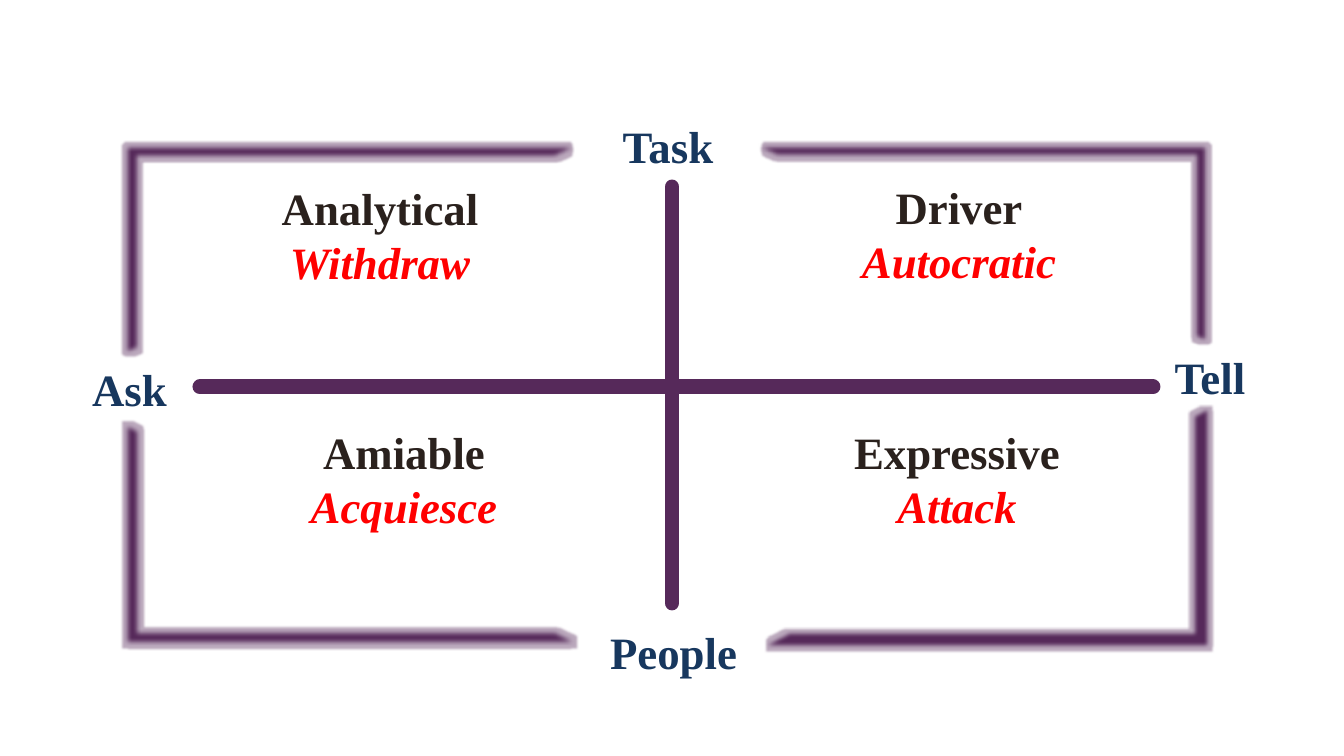
from dataclasses import dataclass

import pptx
import pptx.dml.color
import pptx.enum.shapes
import pptx.enum.text
import pptx.oxml
import pptx.oxml.ns
import pptx.util

PX = 914400 / 134.4
FONT = "Times New Roman"
PURPLE, NAVY, DARK, RED = "56295A", "17375E", "2A211D", "FF0000"
ALIGN = pptx.enum.text.PP_ALIGN


@dataclass
class Box:
    x: int
    y: int
    w: int
    h: int

    def emu(self) -> list:
        return [px(v) for v in (self.x, self.y, self.w, self.h)]


@dataclass
class Label:
    box: Box
    lines: list
    align: ALIGN = ALIGN.CENTER


@dataclass
class Corner:
    box: Box
    flip: str = ""
    rotation: int = 0


def px(n: int) -> int:
    return round(n * PX)


def rgb(value: str):
    return pptx.dml.color.RGBColor.from_string(value)


def add_effects(shape, content: str = "") -> None:
    ns = pptx.oxml.ns.nsdecls("a")
    shape._element.spPr.append(
        pptx.oxml.parse_xml(f"<a:effectLst {ns}>{content}</a:effectLst>"))


def add_axis(s, x1: int, y1: int, x2: int, y2: int) -> None:
    line = s.shapes.add_connector(
        pptx.enum.shapes.MSO_CONNECTOR.STRAIGHT, px(x1), px(y1), px(x2), px(y2))
    line.line.color.rgb = rgb(PURPLE)
    line.line.width = pptx.util.Pt(8)
    line.line._get_or_add_ln().set("cap", "rnd")
    add_effects(line)


def add_label(s, label: Label) -> None:
    tf = s.shapes.add_textbox(*label.box.emu()).text_frame
    tf.word_wrap = True
    tf.auto_size = pptx.enum.text.MSO_AUTO_SIZE.SHAPE_TO_FIT_TEXT
    tf.text = "\n".join(text for text, _ in label.lines)
    for p, (_, color) in zip(tf.paragraphs, label.lines):
        p.alignment = label.align
        font = p.runs[0].font
        font.name, font.size, font.bold = FONT, pptx.util.Pt(24), True
        font.color.rgb = rgb(color)
        if color == RED:
            font.italic = True


def add_corner(s, corner: Corner) -> None:
    sp = s.shapes.add_shape(
        pptx.enum.shapes.MSO_SHAPE.HALF_FRAME, *corner.box.emu())
    sp.adjustments[0], sp.adjustments[1] = 0.076, 0.08
    sp.rotation = corner.rotation
    if corner.flip:
        sp._element.spPr.xfrm.set(corner.flip, "1")
    sp.fill.solid()
    sp.fill.fore_color.rgb = rgb(PURPLE)
    sp.line.fill.background()
    # Pale halo around a softened core
    add_effects(sp, f'<a:glow rad="31750"><a:srgbClr val="{PURPLE}">'
                    '<a:alpha val="40000"/></a:srgbClr></a:glow>'
                    '<a:softEdge rad="31750"/>')


AXIS_LABELS = [
    Label(Box(567, 112, 202, 67), [("Task", NAVY)]),
    Label(Box(556, 618, 235, 67), [("People", NAVY)]),
    Label(Box(67, 355, 113, 67), [("Ask", NAVY)], ALIGN.RIGHT),
    Label(Box(1109, 343, 202, 67), [("Tell", NAVY)]),
]
CORNERS = [
    Corner(Box(124, 144, 470, 215)),
    Corner(Box(750, 403, 460, 246), rotation=180),
    Corner(Box(739, 144, 470, 203), flip="flipH"),
    Corner(Box(124, 419, 470, 227), flip="flipV"),
]
STYLES = [
    Label(Box(810, 173, 298, 122), [("Driver", DARK), ("Autocratic", RED)]),
    Label(Box(235, 174, 290, 122), [("Analytical", DARK), ("Withdraw", RED)]),
    Label(Box(806, 418, 302, 122), [("Expressive", DARK), ("Attack", RED)]),
    Label(Box(258, 418, 292, 122), [("Amiable", DARK), ("Acquiesce", RED)]),
]


def main() -> None:
    prs = pptx.Presentation()
    prs.slide_width, prs.slide_height = px(1344), px(756)
    s = prs.slides.add_slide(prs.slide_layouts[6])

    # Crossed axes and their end labels
    add_axis(s, 200, 387, 1153, 387)
    add_axis(s, 672, 187, 672, 603)
    for label in AXIS_LABELS:
        add_label(s, label)

    # Corner brackets, then the four styles
    for corner in CORNERS:
        add_corner(s, corner)
    for label in STYLES:
        add_label(s, label)

    prs.save("out.pptx")


if __name__ == "__main__":
    main()
